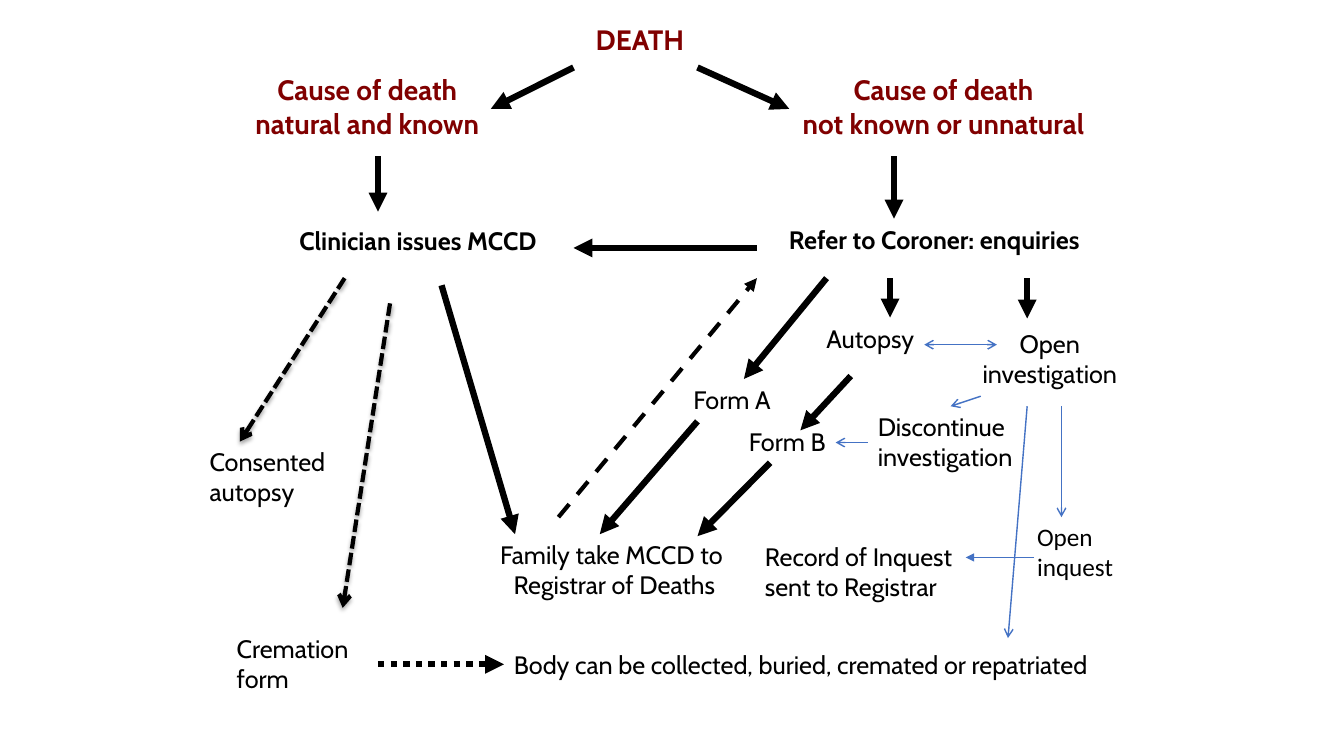
"""Build a slide with the flow of events that follows a death."""
from dataclasses import dataclass

from lxml import etree
from pptx import Presentation
from pptx.dml.color import RGBColor
from pptx.enum.dml import MSO_LINE
from pptx.enum.shapes import MSO_CONNECTOR
from pptx.enum.text import MSO_ANCHOR, MSO_AUTO_SIZE, PP_ALIGN
from pptx.oxml.ns import qn
from pptx.util import Pt

STRAIGHT = MSO_CONNECTOR.STRAIGHT
DASH, SHORT_DASH, DOTS = MSO_LINE.DASH, MSO_LINE.SQUARE_DOT, MSO_LINE.ROUND_DOT
LEFT, CENTER = PP_ALIGN.LEFT, PP_ALIGN.CENTER
TOP, NO_AUTOFIT = MSO_ANCHOR.TOP, MSO_AUTO_SIZE.NONE
TITLE_ONLY = 5


@dataclass(frozen=True)
class Theme:
    """Colours, fonts, type sizes and line widths of the slide."""
    heading: RGBColor = RGBColor(0x80, 0x00, 0x00)
    ink: RGBColor = RGBColor(0x00, 0x00, 0x00)
    blue: RGBColor = RGBColor(0x44, 0x72, 0xC4)
    font: str = "Cabin"
    other_font: str = "Calibri"
    heading_size: int = 20
    body_size: int = 18
    thick: float = 4.5
    medium: float = 3
    thin: float = 1


THEME = Theme()

HEADINGS = [
    ("Cause of death\nnatural and known", (148.3, 48.2, 228.2, 55.4)),
    ("Cause of death\nnot known or unnatural", (563.8, 48.2, 220.3, 55.4)),
]

BOLD_STEPS = [
    ("Clinician issues MCCD ", (191.5, 157.7, 218.2, 28.8)),
    ("Refer to Coroner: enquiries", (546.7, 157, 241.2, 28.8)),
]

CENTERED_STEPS = [
    ("Family take MCCD to \nRegistrar of Deaths", (342.7, 381.6, 192.2, 51.1)),
    ("Open investigation", (689.8, 231.1, 120.2, 51.1)),
]

LEFT_STEPS = [
    ("Autopsy", (583.2, 227.5, 85, 28.8)),
    ("Form A", (488.2, 270.7, 69.8, 28.8)),
    ("Form B", (527.8, 301, 79.9, 28.8)),
    ("Consented\nautopsy", (142.6, 315.4, 116.6, 51.1)),
    ("Cremation\nform", (162, 448.6, 94.3, 51.1)),
    ("Discontinue investigation", (619.9, 290.2, 118.8, 51.1)),
    ("Record of Inquest sent to Registrar", (539.3, 383, 150.5, 51.1)),
    ("Body can be collected, buried, cremated or repatriated",
     (360, 460.1, 429.1, 28.8)),
]

OPEN_INQUEST = ("Open inquest", (733.7, 368.6, 77, 51.1))

MAIN_ARROWS = [
    (409.7, 48.2, 350.6, 77.8),
    (498.2, 48.2, 563.8, 77.8),
    (270, 111.6, 270, 151.2),
    (638.6, 111.6, 638.6, 156.2),
    (540.7, 177.1, 409.7, 177.1),
    (315.4, 203.8, 367.9, 381.6),
    (590.4, 198.7, 531.4, 270.7),
    (635.8, 198.7, 635.8, 226.8),
    (733.7, 198.7, 733.7, 227.5),
    (607.7, 268.6, 571.7, 307.4),
    (498.2, 301, 428.4, 381.6),
    (550.1, 330.5, 498.2, 383),
]

SHADOWED_ARROWS = [
    (246.2, 198.7, 171.4, 315.4),
    (278.6, 216.7, 244.8, 434.2),
]

INQUEST_ARROWS = [
    (733.7, 290.2, 720, 455.8),
    (700.6, 283, 679, 290.2),
    (619.9, 316.1, 596.9, 316.1),
    (758.2, 290.2, 758.2, 369.4),
]

REGISTRAR_QUERY = (398.9, 369.4, 540.7, 198.7)
CREMATION_RELEASE = (270, 474.5, 360, 474.5)
INQUEST_RECORD = (738.7, 398.2, 689.8, 398.2)
AUTOPSY_INVESTIGATION = (660.2, 246.2, 712.1, 246.2)


def write_text(shape, text, color, size, align=LEFT, bold=False, font=THEME.font):
    """Fill a shape with text, one paragraph per line, and format it."""
    frame = shape.text_frame
    frame.word_wrap = True
    frame.auto_size = NO_AUTOFIT
    frame.vertical_anchor = TOP
    frame.text = text
    for paragraph in frame.paragraphs:
        paragraph.alignment = align
        paragraph.line_spacing = 1.0
        paragraph.space_before = Pt(0)
        for run in paragraph.runs:
            run.font.name = font
            run.font.size = Pt(size)
            run.font.bold = bold
            run.font.color.rgb = color


def add_title(slide, text):
    """Move the title placeholder to the top of the flow and format it."""
    title = slide.shapes.title
    title.left, title.top = Pt(418.3), Pt(12.2)
    title.width, title.height = Pt(87.8), Pt(31.7)
    write_text(title, text, THEME.heading, THEME.heading_size, bold=True)


def add_heading(slide, text, box):
    """Add a centred heading of one branch."""
    shape = slide.shapes.add_textbox(*map(Pt, box))
    write_text(shape, text, THEME.heading, THEME.heading_size, CENTER, True)


def add_step(slide, text, box, **style):
    """Add one step of the flow."""
    shape = slide.shapes.add_textbox(*map(Pt, box))
    write_text(shape, text, THEME.ink, THEME.body_size, **style)


def add_shadow(effects):
    """Put a soft shadow below into an effect list."""
    shadow = etree.SubElement(effects, qn("a:outerShdw"), blurRad=str(Pt(3.1)),
                              dist=str(Pt(1.8)), dir="5400000", rotWithShape="0")
    color = etree.SubElement(shadow, qn("a:srgbClr"), val=str(THEME.ink))
    etree.SubElement(color, qn("a:alpha"), val="35000")


def add_arrow(slide, ends, color=THEME.ink, width=THEME.thick, dash=None,
              tip="triangle", both=False, shadow=False):
    """Add a straight arrow between two points."""
    connector = slide.shapes.add_connector(STRAIGHT, *map(Pt, ends))
    line = connector.line
    line.color.rgb = color
    line.width = Pt(width)
    if dash is not None:
        line.dash_style = dash
    properties = connector._element.spPr
    outline = properties.find(qn("a:ln"))
    if both:
        etree.SubElement(outline, qn("a:headEnd"), type=tip)
    etree.SubElement(outline, qn("a:tailEnd"), type=tip)
    effects = etree.SubElement(properties, qn("a:effectLst"))
    if shadow:
        add_shadow(effects)


def add_texts(slide):
    """Add the title, the headings and the steps."""
    add_title(slide, "DEATH")
    for text, box in HEADINGS:
        add_heading(slide, text, box)
    for text, box in BOLD_STEPS:
        add_step(slide, text, box, align=CENTER, bold=True)
    for text, box in CENTERED_STEPS:
        add_step(slide, text, box, align=CENTER)
    for text, box in LEFT_STEPS:
        add_step(slide, text, box)
    add_step(slide, *OPEN_INQUEST, font=THEME.other_font)


def add_arrows(slide):
    """Add the arrows that join the steps."""
    for ends in MAIN_ARROWS:
        add_arrow(slide, ends)
    add_arrow(slide, CREMATION_RELEASE, dash=DOTS)
    add_arrow(slide, REGISTRAR_QUERY, width=THEME.medium, dash=DASH)
    for ends in SHADOWED_ARROWS:
        add_arrow(slide, ends, width=THEME.medium, dash=SHORT_DASH,
                  tip="arrow", shadow=True)
    for ends in INQUEST_ARROWS:
        add_arrow(slide, ends, THEME.blue, THEME.thin, tip="arrow")
    add_arrow(slide, INQUEST_RECORD, THEME.blue, THEME.thin)
    add_arrow(slide, AUTOPSY_INVESTIGATION, THEME.blue, THEME.thin,
              tip="arrow", both=True)


def main():
    """Build and save the presentation."""
    presentation = Presentation()
    presentation.slide_width, presentation.slide_height = Pt(960), Pt(540)
    slide = presentation.slides.add_slide(presentation.slide_layouts[TITLE_ONLY])
    add_texts(slide)
    add_arrows(slide)
    presentation.save("out.pptx")


if __name__ == "__main__":
    main()
